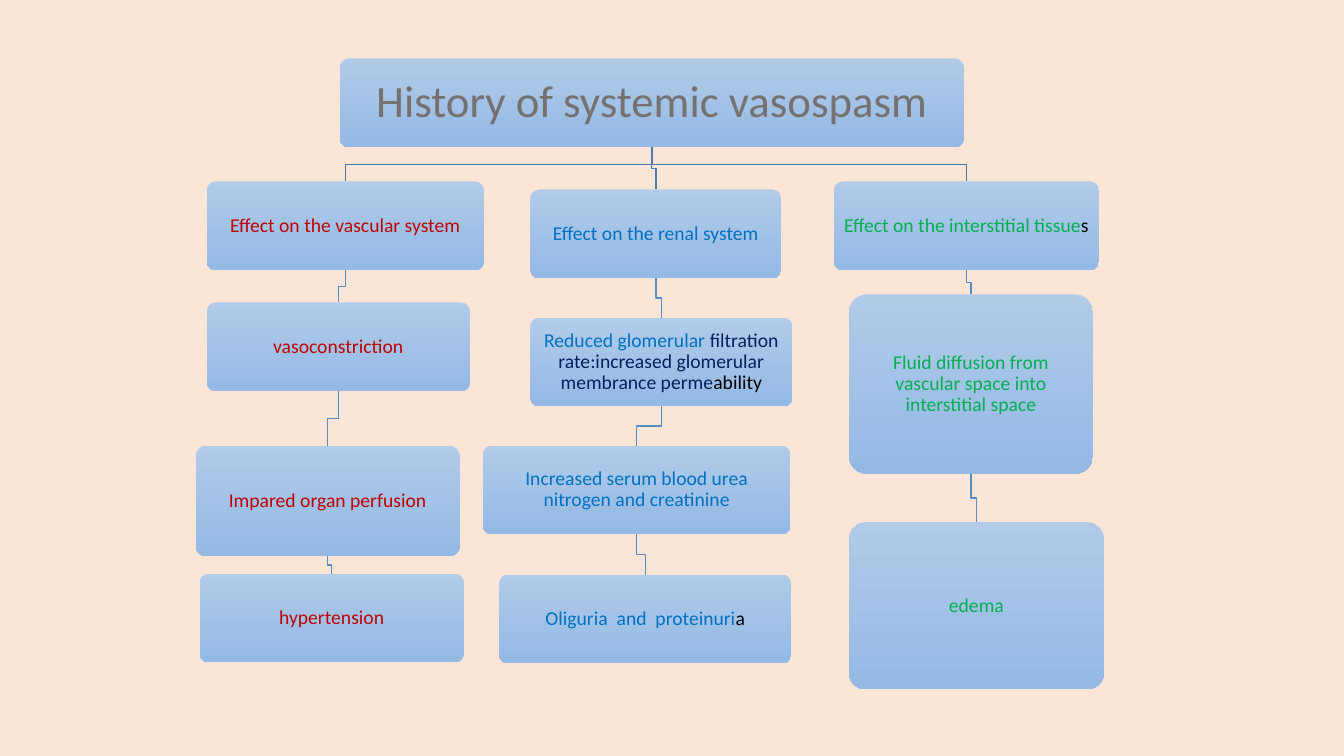
"""Build a flow chart slide on the effects of systemic vasospasm."""
from pptx import Presentation, util as u
from pptx.dml.color import RGBColor
from pptx.enum import shapes, text

HUES = {
    "back": "FBE5D6", "top": "B1CBE9", "base": "93B9E4", "title": "767171",
    "trunk": "497CAB", "link": "538DC1", "red": "C00000", "blue": "0070C0",
    "navy": "002060", "green": "00B050", "black": "000000",
}
ROOT = (3.37, 0.58, 6.19, 0.88)
CHAINS = [
    [((2.05, 1.8, 2.75, 0.88), [("Effect on the vascular system", "red")]),
     ((2.05, 3, 2.61, 0.88), [("vasoconstriction", "red")]),
     ((1.94, 4.42, 2.62, 1.1), [("Impared organ perfusion", "red")]),
     ((1.98, 5.69, 2.62, 0.88), [("hypertension", "red")])],
    [((5.26, 1.88, 2.49, 0.88), [("Effect on the renal system", "blue")]),
     ((5.26, 3.15, 2.6, 0.88),
      [("Reduced glomerular ", "blue"),
       ("filtration rate:increased glomerular membrance perme", "navy"),
       ("ability", "black")]),
     ((4.79, 4.42, 3.05, 0.88),
      [("Increased serum blood urea nitrogen and creatinine", "blue")]),
     ((4.95, 5.7, 2.9, 0.88),
      [("Oliguria  and  proteinuri", "blue"), ("a", "black")])],
    [((8.27, 1.8, 2.63, 0.88),
      [("Effect on the interstitial tissue", "green"), ("s", "black")]),
     ((8.42, 2.92, 2.42, 1.78),
      [("Fluid diffusion from vascular space into interstitial space", "green")]),
     ((8.42, 5.18, 2.53, 1.66), [("edema", "green")])],
]

deck = Presentation()
deck.slide_width, deck.slide_height = u.Inches(13.33), u.Inches(7.5)
slide = deck.slides.add_slide(deck.slide_layouts[5])
slide.background.fill.solid()
slide.background.fill.fore_color.rgb = RGBColor.from_string(HUES["back"])


def add_box(area):
    box = slide.shapes.add_shape(
        shapes.MSO_SHAPE.ROUNDED_RECTANGLE, *map(u.Inches, area))
    box.adjustments[0] = 0.1
    box.shadow.inherit = False
    box.line.fill.background()
    box.fill.gradient()
    box.fill.gradient_angle = 270
    for stop, hue in zip(box.fill.gradient_stops, ("top", "base")):
        stop.color.rgb = RGBColor.from_string(HUES[hue])
    return box


def write(shape, runs, size, inset):
    frame = shape.text_frame
    look = {"word_wrap": True, "auto_size": text.MSO_AUTO_SIZE.NONE,
            "vertical_anchor": text.MSO_ANCHOR.MIDDLE}
    for side in ("left", "right", "top", "bottom"):
        look["margin_" + side] = u.Inches(inset)
    for name, value in look.items():
        setattr(frame, name, value)
    para = frame.paragraphs[0]
    para.alignment = text.PP_ALIGN.CENTER
    para.line_spacing = 0.9
    for words, hue in runs:
        run = para.add_run()
        run.text = words
        for name, value in {"name": "Calibri", "size": u.Pt(size)}.items():
            setattr(run.font, name, value)
        run.font.color.rgb = RGBColor.from_string(HUES[hue])


add_box(ROOT)
title = slide.shapes.title
for name, value in zip(("left", "top", "width", "height"), ROOT):
    setattr(title, name, u.Inches(value))
write(title, [("History of systemic vasospasm", "title")], 32, 0.15)
slide.shapes._spTree.append(title._element)

for chain in CHAINS:
    above, hue = ROOT, "trunk"
    for area, runs in chain:
        start, end = above[0] + above[2] / 2, area[0] + area[2] / 2
        low = above[1] + above[3]
        mid = (low + area[1]) / 2
        pen = slide.shapes.build_freeform(u.Inches(start), u.Inches(low))
        bends = [(start, mid), (end, mid), (end, area[1])]
        pen.add_line_segments(
            [(u.Inches(x), u.Inches(y)) for x, y in bends], close=False)
        link = pen.convert_to_shape()
        link.shadow.inherit = False
        link.fill.background()
        link.line.width = u.Pt(1)
        link.line.color.rgb = RGBColor.from_string(HUES[hue])
        write(add_box(area), runs, 14, 0.06)
        above, hue = area, "link"

deck.save("out.pptx")
